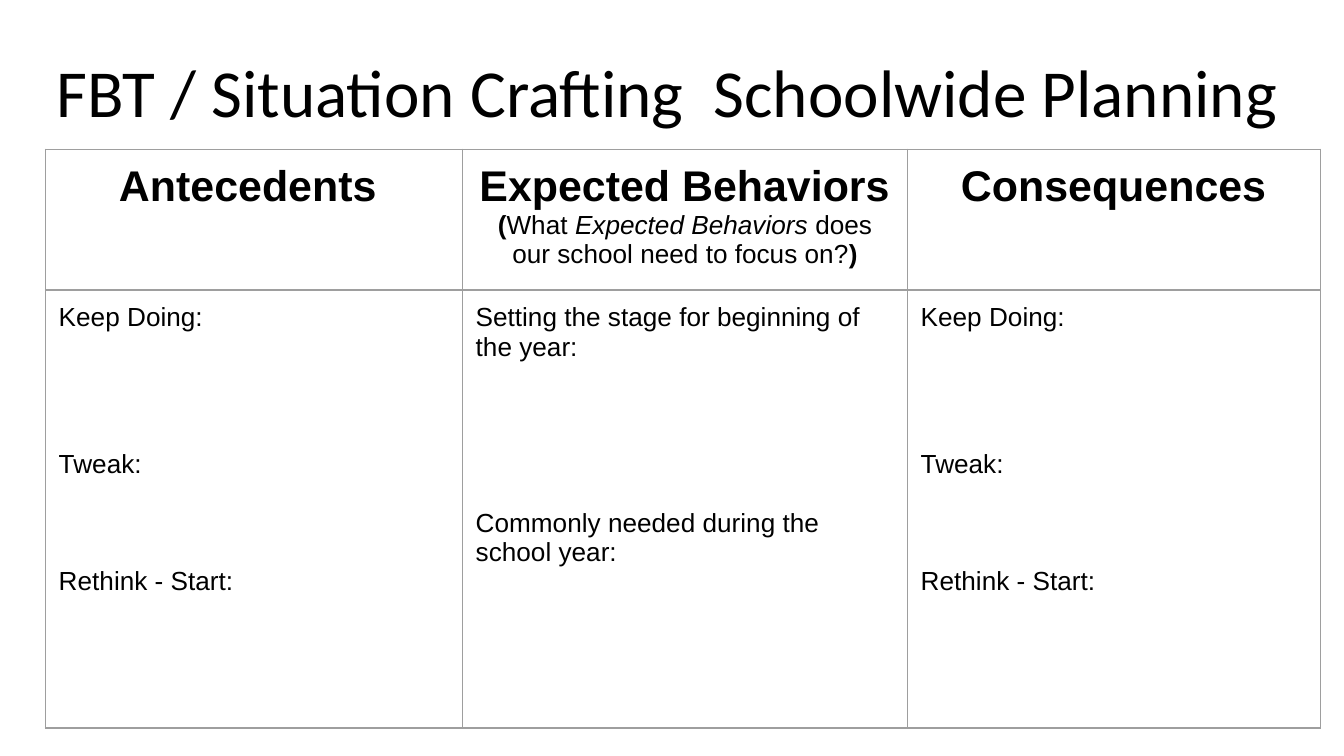
from dataclasses import dataclass

from pptx import Presentation
from pptx.dml.color import RGBColor as Rgb
from pptx.enum.text import MSO_ANCHOR as Anchor, PP_ALIGN as Align
from pptx.oxml import parse_xml
from pptx.oxml.ns import nsdecls
from pptx.util import Cm, Pt


@dataclass(frozen=True)
class Theme:
    """Colours, fonts and type sizes of the slide."""
    ink: str = "000000"
    rule: str = "9E9E9E"
    rule_width: float = 0.75
    title_font: str = "Calibri"
    body_font: str = "Arial"
    title_size: int = 36
    heading_size: int = 23
    body_size: int = 14
    line_pitch: float = 15.72


THEME = Theme()
INSET = Cm(0.25)
COLUMN_WIDTHS = (7.88, 8.41, 7.8)
ROW_HEIGHTS = (2.53, 8.28)
HEADINGS = ("Antecedents ", "Expected Behaviors", "Consequences")
FOCUS_QUESTION = (
    ("(", {"bold": True}),
    ("What ", {}),
    ("Expected Behaviors", {"italic": True}),
    (" does our school need to focus on?", {}),
    (")", {"bold": True}),
)
REVIEW_PROMPTS = (("Keep Doing:", 0), ("Tweak:", 4), ("Rethink - Start:", 3))
SEASON_PROMPTS = (
    ("Setting the stage for beginning of the year:", 0),
    ("Commonly needed during the school year:", 5),
)
PROMPTS = (REVIEW_PROMPTS, SEASON_PROMPTS, REVIEW_PROMPTS)


def write(paragraph, text, *, size=THEME.body_size, font=THEME.body_font,
          bold=False, italic=False, align=Align.LEFT):
    """Add a formatted run of text to a paragraph."""
    paragraph.alignment = align
    run = paragraph.add_run()
    run.text = text
    run.font.size = Pt(size)
    run.font.name = font
    run.font.bold = bold
    run.font.italic = italic
    run.font.color.rgb = Rgb.from_string(THEME.ink)


def set_insets(holder):
    """Give a cell or text frame the same inset on every side."""
    holder.margin_left = holder.margin_right = INSET
    holder.margin_top = holder.margin_bottom = INSET


def add_title(slide, text):
    """Place the centred slide title."""
    frame = slide.shapes.add_textbox(Cm(0.25), Cm(0.7), Cm(24.72), Cm(1.6)).text_frame
    frame.word_wrap = True
    frame.vertical_anchor = Anchor.TOP
    set_insets(frame)
    write(frame.paragraphs[0], text, size=THEME.title_size,
          font=THEME.title_font, align=Align.CENTER)


def style_cell(cell):
    """Outline a cell and leave it unfilled."""
    properties = cell._tc.get_or_add_tcPr()
    for side in ("lnL", "lnR", "lnT", "lnB"):
        properties.append(parse_xml(
            f'<a:{side} {nsdecls("a")} w="{Pt(THEME.rule_width)}"><a:solidFill>'
            f'<a:srgbClr val="{THEME.rule}"/></a:solidFill></a:{side}>'))
    cell.fill.background()
    cell.vertical_anchor = Anchor.TOP
    set_insets(cell)


def fill_prompts(cell, prompts):
    """Write prompts, each after its number of lines left free for notes."""
    frame = cell.text_frame
    for index, (prompt, free_lines) in enumerate(prompts):
        paragraph = frame.add_paragraph() if index else frame.paragraphs[0]
        if free_lines:
            paragraph.space_before = Pt(free_lines * THEME.line_pitch)
        write(paragraph, prompt)


def add_planning_table(slide):
    """Build the table of headings and planning prompts."""
    table = slide.shapes.add_table(
        len(ROW_HEIGHTS), len(COLUMN_WIDTHS), Cm(0.86), Cm(2.82),
        Cm(sum(COLUMN_WIDTHS)), Cm(sum(ROW_HEIGHTS))).table
    table.first_row = table.horz_banding = False
    for row, height in zip(table.rows, ROW_HEIGHTS):
        row.height = Cm(height)
    for column, width in zip(table.columns, COLUMN_WIDTHS):
        column.width = Cm(width)
    for cell in table.iter_cells():
        style_cell(cell)
    for index, (heading, prompts) in enumerate(zip(HEADINGS, PROMPTS)):
        write(table.cell(0, index).text_frame.paragraphs[0], heading,
              size=THEME.heading_size, bold=True, align=Align.CENTER)
        fill_prompts(table.cell(1, index), prompts)
    question = table.cell(0, 1).text_frame.add_paragraph()
    for text, emphasis in FOCUS_QUESTION:
        write(question, text, align=Align.CENTER, **emphasis)


def main():
    """Build and save the planning slide."""
    deck = Presentation()
    deck.slide_width, deck.slide_height = Cm(25.4), Cm(14.29)
    slide = deck.slides.add_slide(deck.slide_layouts[6])
    add_title(slide, "FBT / Situation Crafting  Schoolwide Planning")
    add_planning_table(slide)
    deck.save("out.pptx")


if __name__ == "__main__":
    main()
